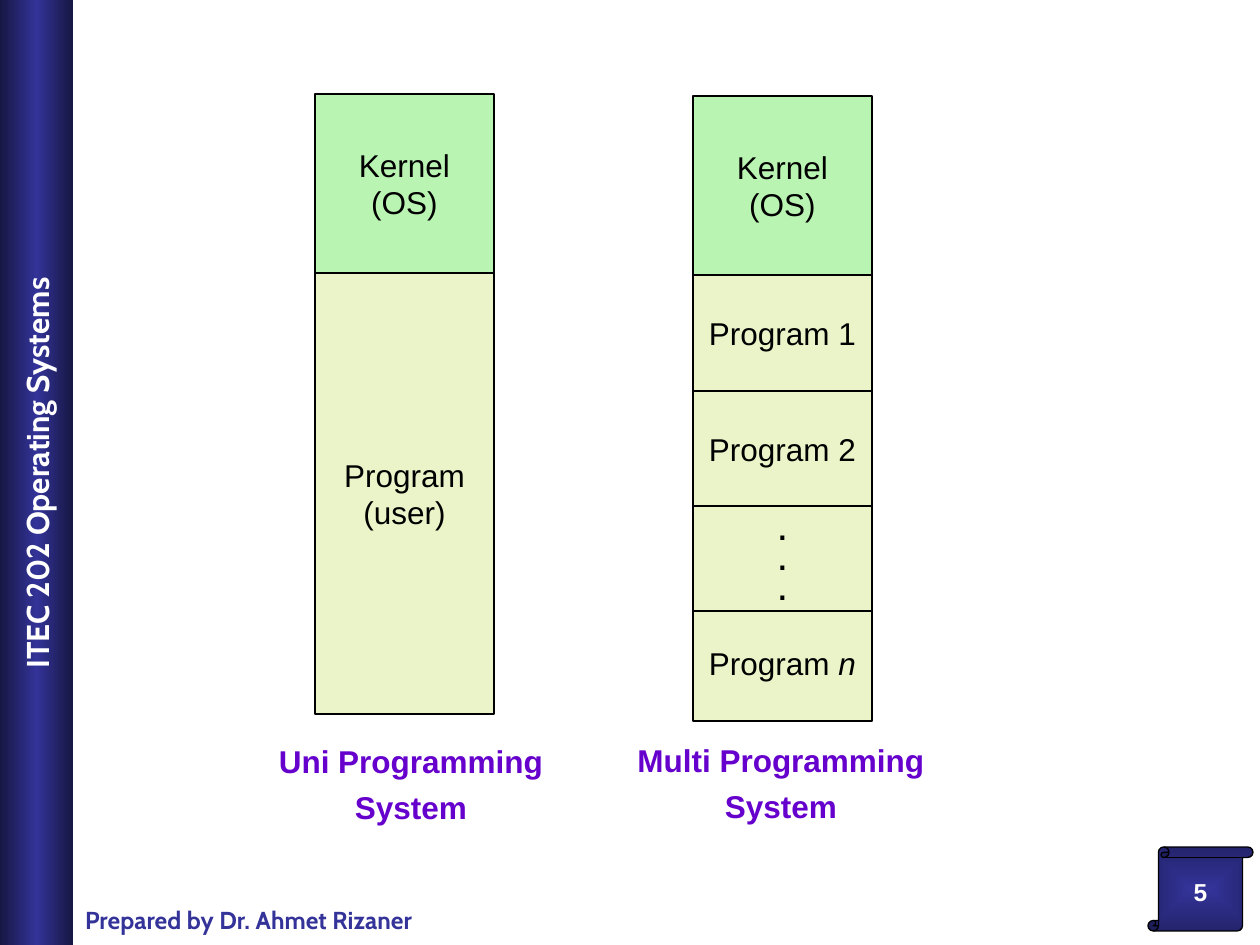
from lxml.etree import SubElement
from pptx import Presentation
from pptx.dml.color import RGBColor
from pptx.enum.shapes import MSO_SHAPE
from pptx.enum.text import MSO_ANCHOR, PP_ALIGN
from pptx.oxml.ns import qn
from pptx.util import Pt

SCALE = 914400 / 126
BLACK = RGBColor(0x00, 0x00, 0x00)
WHITE = RGBColor(0xFF, 0xFF, 0xFF)
BLUE = RGBColor(0x33, 0x33, 0x99)
NAVY = RGBColor(0x17, 0x17, 0x44)
DEEP = RGBColor(0x24, 0x24, 0x6D)
MINT = RGBColor(0xBA, 0xF4, 0xB2)
CREAM = RGBColor(0xEB, 0xF4, 0xC8)
PURPLE = RGBColor(0x66, 0x00, 0xCC)

LABEL = {"name": "Arial", "size": Pt(18), "bold": False}
DOTS = {"name": "Arial", "size": Pt(24), "bold": False}
TITLE = {"name": "Arial", "size": Pt(18), "bold": True}
NUMBER = {"name": "Arial", "size": Pt(14), "bold": True}
COURSE = {"name": "Cabin", "size": Pt(18), "bold": True}
AUTHOR = {"name": "Cabin", "size": Pt(14), "bold": True}


def px(count):
    return round(count * SCALE)


def apply(target, values):
    for key, value in values.items():
        setattr(target, key, value)


def write(shape, lines, font, color, align=PP_ALIGN.CENTER, gap=0, pitch=None, top=6):
    frame = shape.text_frame
    apply(frame, {
        "word_wrap": True, "vertical_anchor": MSO_ANCHOR.MIDDLE,
        "margin_left": 0, "margin_right": 0,
        "margin_top": px(top), "margin_bottom": px(6),
    })
    for row, line in enumerate(lines):
        para = frame.add_paragraph() if row else frame.paragraphs[0]
        apply(para, {"alignment": align, "line_spacing": pitch})
        if row and gap:
            para.space_before = Pt(gap)
        for part, text in enumerate(line):
            run = para.add_run()
            run.text = text
            apply(run.font, font)
            run.font.italic = part > 0
            run.font.color.rgb = color


def draw(slide, kind, box, edge=True):
    shape = slide.shapes.add_shape(kind, *map(px, box))
    shape.shadow.inherit = False
    if edge:
        shape.line.color.rgb = BLACK
        shape.line.width = Pt(0.75)
    else:
        shape.line.fill.background()
    return shape


def blend(shape, stops, center=False):
    shape.fill.gradient()
    grad = shape.element.spPr.find(qn("a:gradFill"))
    for child in list(grad):
        grad.remove(child)
    group = SubElement(grad, qn("a:gsLst"))
    for spot, color in stops:
        stop = SubElement(group, qn("a:gs"), pos=str(spot * 1000))
        SubElement(stop, qn("a:srgbClr"), val=str(color))
    if center:
        route = SubElement(grad, qn("a:path"))
        route.set("path", "rect")
        SubElement(route, qn("a:fillToRect"), l="50000", t="50000", r="50000", b="50000")
    else:
        SubElement(grad, qn("a:lin"), ang="5400000", scaled="0")


def sidebar(slide, left, top, width, height):
    box = (left + (width - height) / 2, top + (height - width) / 2, height, width)
    band = draw(slide, MSO_SHAPE.RECTANGLE, box, edge=False)
    band.rotation = 270
    blend(band, [(0, NAVY), (50, BLUE), (100, NAVY)])
    write(band, [("ITEC 202 Operating Systems",)], COURSE, WHITE)


def footer(slide, left, top, width, height):
    note = slide.shapes.add_textbox(*map(px, (left, top, width, height)))
    write(note, [("Prepared by Dr. Ahmet Rizaner",)], AUTHOR, BLUE, PP_ALIGN.LEFT)
    note.text_frame.margin_left = px(12)


def badge(slide, left, top, width, height):
    scroll = draw(slide, MSO_SHAPE.VERTICAL_SCROLL, (left, top, width, height))
    blend(scroll, [(0, BLUE), (100, DEEP)], center=True)
    write(scroll, [("5",)], NUMBER, WHITE)


def stack(slide, left, top, width, cells):
    for drop, height, fill, lines, style in cells:
        cell = draw(slide, MSO_SHAPE.RECTANGLE, (left, top + drop, width, height))
        cell.fill.solid()
        cell.fill.fore_color.rgb = fill
        write(cell, lines, color=BLACK, **style)


def caption(slide, left, top, width, height, name):
    label = slide.shapes.add_textbox(*map(px, (left, top, width, height)))
    write(label, [(name,), ("System",)], TITLE, PURPLE, gap=4.4)


def main():
    deck = Presentation()
    deck.slide_width, deck.slide_height = px(1260), px(945)
    slide = deck.slides.add_slide(deck.slide_layouts[6])

    sidebar(slide, 0, 0, 73, 946)
    footer(slide, 73, 899, 408, 42)
    badge(slide, 1148, 847, 105, 84)

    plain = {"font": LABEL}
    tight = {"font": DOTS, "pitch": 0.6, "top": 12}
    kernel = (0, 179, MINT, [("Kernel",), ("(OS)",)], plain)
    stack(slide, 315, 94, 179, [
        kernel,
        (179, 441, CREAM, [("Program",), ("(user)",)], plain),
    ])
    stack(slide, 693, 96, 179, [
        kernel,
        (179, 116, CREAM, [("Program 1",)], plain),
        (295, 116, CREAM, [("Program 2",)], plain),
        (509, 116, CREAM, [("Program ", "n")], plain),
        (410, 105, CREAM, [(".",)] * 3, tight),
    ])
    caption(slide, 266, 736, 290, 96, "Uni Programming")
    caption(slide, 625, 735, 312, 96, "Multi Programming")
    deck.save("out.pptx")


if __name__ == "__main__":
    main()
